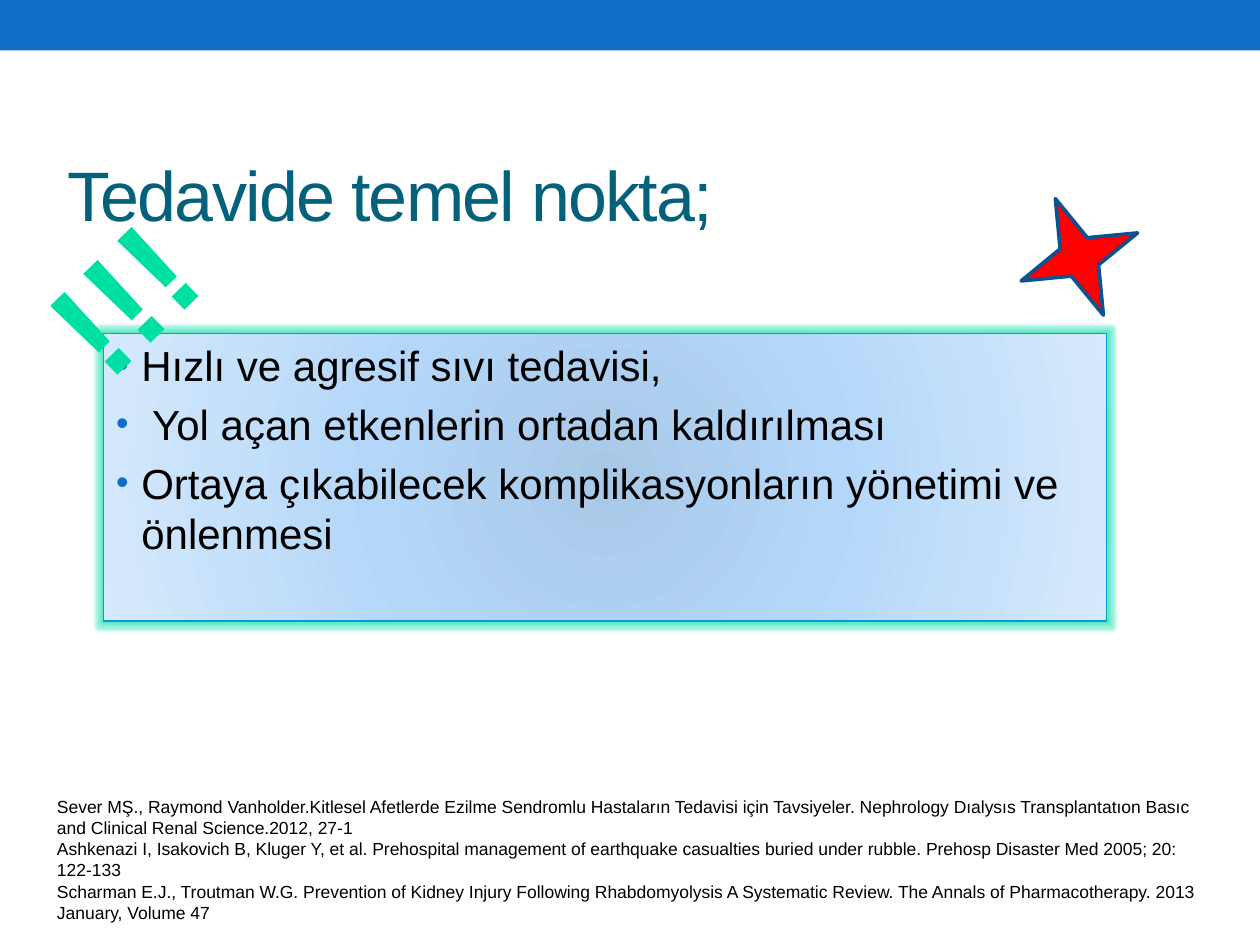
from dataclasses import dataclass, field

from lxml.etree import SubElement
from pptx import Presentation
from pptx.dml.color import RGBColor
from pptx.enum.shapes import MSO_SHAPE
from pptx.enum.text import MSO_ANCHOR, PP_ALIGN
from pptx.oxml.ns import qn
from pptx.util import Cm, Pt


@dataclass
class Box:
    left: float
    top: float
    width: float
    height: float
    turn: float = 0


@dataclass
class Note:
    box: Box
    lines: list[str]
    font: dict
    color: str
    frame: dict = field(default_factory=dict)
    para: dict = field(default_factory=dict)
    track: int = 0


def paint(color, code: str) -> None:
    color.rgb = RGBColor.from_string(code)


def assign(item, values: dict) -> None:
    for name, value in values.items():
        setattr(item, name, value)


def place(box: Box) -> list:
    return [Cm(n) for n in (box.left, box.top, box.width, box.height)]


def add_form(slide, kind, box: Box, fill: str = "", line: str = "", width: float = 0):
    form = slide.shapes.add_shape(kind, *place(box))
    form.rotation = box.turn
    form.shadow.inherit = False
    if fill:
        form.fill.solid()
        paint(form.fill.fore_color, fill)
    if line:
        paint(form.line.color, line)
        form.line.width = Pt(width)
    else:
        form.line.fill.background()
    return form


def write(frame, note: Note) -> None:
    assign(frame, {"word_wrap": True, **note.frame})
    for i, line in enumerate(note.lines):
        para = frame.paragraphs[0] if i == 0 else frame.add_paragraph()
        assign(para, {"alignment": PP_ALIGN.LEFT, **note.para})
        run = para.add_run()
        run.text = line
        assign(run.font, {"name": "Arial", **note.font})
        paint(run.font.color, note.color)
        if note.track:
            run.font._element.set("spc", str(note.track))


def add_note(slide, note: Note) -> None:
    form = slide.shapes.add_textbox(*place(note.box))
    form.rotation = note.box.turn
    write(form.text_frame, note)


def add_code(node, code: str):
    return SubElement(node, qn("a:srgbClr"), val=code)


def shade(form, stops: list[tuple[int, str]]) -> None:
    """Fill with a circular gradient that starts at the centre."""
    form.fill.gradient()
    grad = form._element.spPr.find(qn("a:gradFill"))
    for child in list(grad):
        grad.remove(child)
    group = SubElement(grad, qn("a:gsLst"))
    for pos, code in stops:
        add_code(SubElement(group, qn("a:gs"), pos=str(pos * 1000)), code)
    ring = SubElement(grad, qn("a:path"), path="circle")
    SubElement(ring, qn("a:fillToRect"), {side: "50000" for side in "ltrb"})


def add_glow(form, code: str, size: float, alpha: int) -> None:
    effects = form._element.spPr.find(qn("a:effectLst"))
    glow = SubElement(effects, qn("a:glow"), rad=str(Pt(size)))
    SubElement(add_code(glow, code), qn("a:alpha"), val=str(alpha * 1000))


def add_bullet(para, code: str) -> None:
    props = para._p.get_or_add_pPr()
    props.set("marL", str(Cm(0.51)))
    props.set("indent", str(-Cm(0.51)))
    add_code(SubElement(props, qn("a:buClr")), code)
    SubElement(props, qn("a:buSzPct"), val="85000")
    SubElement(props, qn("a:buFont"), typeface="Arial")
    SubElement(props, qn("a:buChar"), char="•")


BLUE = "0F6FC6"
GREEN = "00DFA2"

TITLE = Note(Box(1.11, 2.53, 22.86, 2.74), ["Tedavide temel nokta;"],
             {"size": Pt(40)}, "04617B",
             {"vertical_anchor": MSO_ANCHOR.MIDDLE}, track=-100)
BODY = Note(Box(2.09, 6.72, 20.22, 5.8), [
    "Hızlı ve agresif sıvı tedavisi,",
    " Yol açan etkenlerin ortadan kaldırılması",
    "Ortaya çıkabilecek komplikasyonların yönetimi ve önlenmesi",
], {"size": Pt(24)}, "000000", {"vertical_anchor": MSO_ANCHOR.TOP},
    {"space_before": Pt(4.8)})
MARKS = Note(Box(0.3, 3.94, 3.84, 3.68, 315.7), ["!!!"],
             {"size": Pt(80), "bold": True}, GREEN,
             {"word_wrap": False, "margin_top": Cm(0.41)},
             {"alignment": PP_ALIGN.CENTER})
REFS = Note(Box(0.9, 15.93, 23.42, 2.82), [
    "Sever MŞ., Raymond Vanholder.Kitlesel Afetlerde Ezilme Sendromlu Hastaların "
    "Tedavisi için Tavsiyeler. Nephrology Dıalysıs Transplantatıon Basıc and "
    "Clinical Renal Science.2012, 27-1",
    "Ashkenazi I, Isakovich B, Kluger Y, et al. Prehospital management of earthquake "
    "casualties buried under rubble. Prehosp Disaster Med 2005; 20: 122-133",
    "Scharman E.J., Troutman W.G. Prevention of Kidney Injury Following Rhabdomyolysis "
    "A Systematic Review. The Annals of Pharmacotherapy. 2013 January, Volume 47",
], {"size": Pt(10)}, "000000")


def main() -> None:
    deck = Presentation()
    assign(deck, {"slide_width": Cm(25.4), "slide_height": Cm(19.05)})
    slide = deck.slides.add_slide(deck.slide_layouts[6])

    add_form(slide, MSO_SHAPE.RECTANGLE, Box(0, 0, 25.4, 1.02), BLUE)
    add_note(slide, TITLE)
    star = add_form(slide, MSO_SHAPE.STAR_4_POINT, Box(20.49, 3.91, 2.54, 2.54, 337.6),
                    "FF0000", "0B5292", 2.08)
    star.adjustments[0] = 0.165

    panel = add_form(slide, MSO_SHAPE.RECTANGLE, BODY.box, line="009DD9", width=0.75)
    shade(panel, [(0, "A8C8E7"), (45, "B4D7F9"), (100, "D6E9FC")])
    add_glow(panel, GREEN, 3, 40)
    write(panel.text_frame, BODY)
    for para in panel.text_frame.paragraphs:
        add_bullet(para, BLUE)

    add_note(slide, MARKS)
    add_note(slide, REFS)
    deck.save("out.pptx")


if __name__ == "__main__":
    main()
